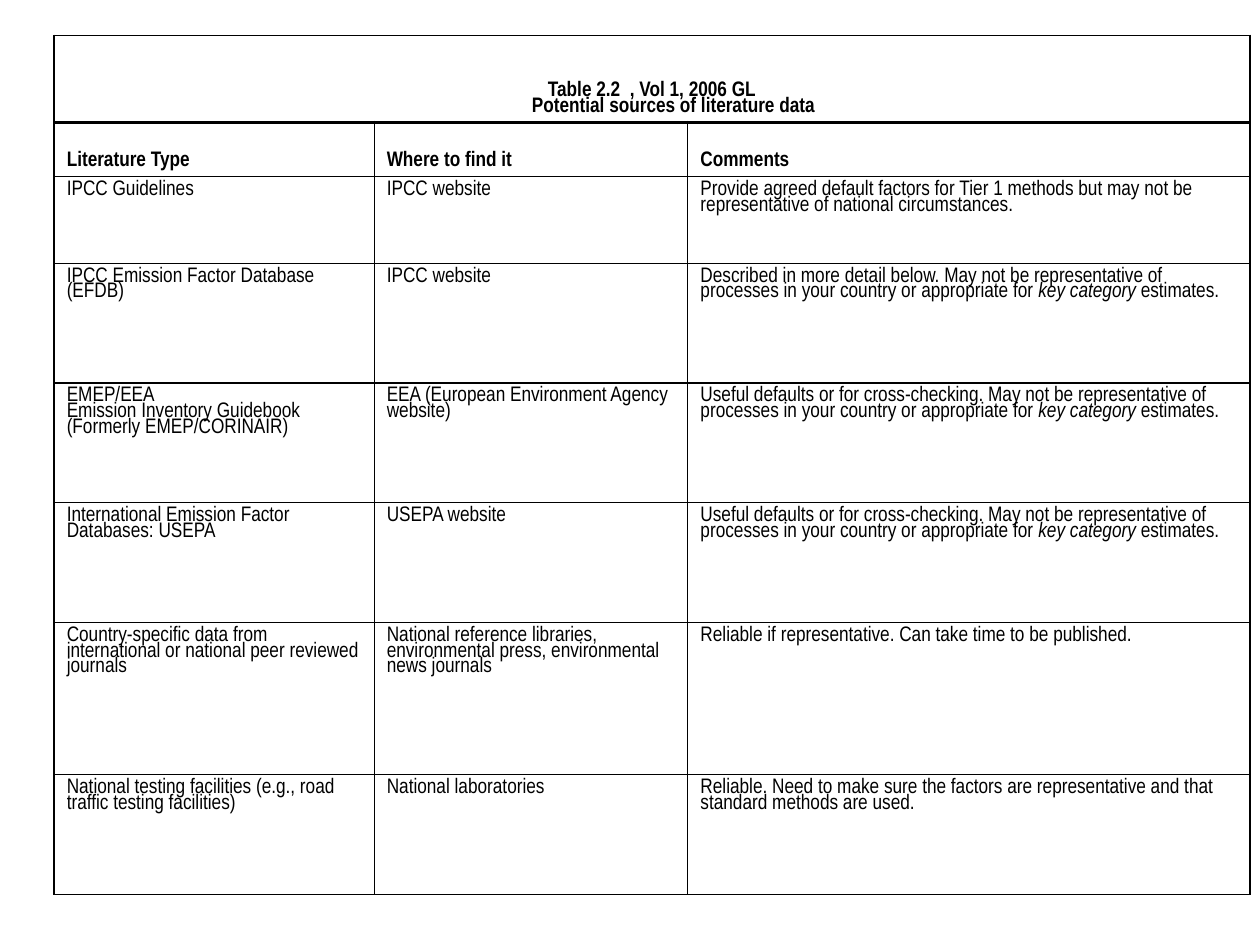
from lxml.etree import SubElement
from pptx import Presentation
from pptx.dml.color import RGBColor
from pptx.enum.text import MSO_ANCHOR as Anchor, PP_ALIGN as Align
from pptx.oxml.ns import qn
from pptx.util import Inches, Pt

BLACK, WHITE = "000000", "FFFFFF"
THIN, MEDIUM, THICK = 0.75, 1, 2
HANGING = Inches(0.38)
ITALIC_TERM = "key category"
CROSS_CHECK = (
    "Useful defaults or for cross-checking. May not be representative of processes "
    "in your country or appropriate for key category estimates."
)


def write_text(cell, text, bold=False, align=Align.LEFT, anchor=Anchor.TOP,
               hanging=False, size=12, font="Arial Narrow", color=BLACK):
    cell.vertical_anchor = anchor
    frame = cell.text_frame
    for index, line in enumerate(text.split("\n")):
        paragraph = frame.paragraphs[0] if index == 0 else frame.add_paragraph()
        paragraph.alignment = align
        paragraph.line_spacing = 0.8
        if hanging:
            properties = paragraph._p.get_or_add_pPr()
            properties.set("marL", str(HANGING))
            properties.set("indent", str(-HANGING))
        for number, part in enumerate(line.split("\v")):
            if number:
                paragraph.add_line_break()
            before, term, after = part.partition(ITALIC_TERM)
            for piece in filter(None, (before, term, after)):
                run = paragraph.add_run()
                run.text = piece
                run.font.name = font
                run.font.size = Pt(size)
                run.font.bold = bold
                run.font.italic = piece == ITALIC_TERM
                run.font.color.rgb = RGBColor.from_string(color)


def draw_borders(cell, widths, color=BLACK):
    properties = cell._tc.get_or_add_tcPr()
    for side, width in zip("LRTB", widths):
        line = SubElement(properties, qn(f"a:ln{side}"), w=str(Pt(width)))
        fill = SubElement(line, qn("a:solidFill"))
        SubElement(fill, qn("a:srgbClr"), val=color)


column_widths = [2.54, 2.49, 4.46]
row_heights = [0.69, 0.43, 0.69, 0.95, 0.95, 0.95, 1.21, 0.95]
rows = [
    ["Table 2.2  , Vol 1, 2006 GL\vPotential sources of literature data ", "", ""],
    ["Literature Type", "Where to find it", "Comments"],
    ["IPCC Guidelines", "IPCC website",
     "Provide agreed default factors for Tier 1 methods but may not be "
     "representative of national circumstances."],
    ["IPCC Emission Factor Database (EFDB)", "IPCC website",
     "Described in more detail below. May not be representative of processes "
     "in your country or appropriate for key category estimates."],
    ["EMEP/EEA\nEmission Inventory Guidebook (Formerly EMEP/CORINAIR)",
     "EEA (European Environment Agency website)", CROSS_CHECK],
    ["International Emission Factor Databases: USEPA", "USEPA website", CROSS_CHECK],
    ["Country-specific data from international or national peer reviewed journals",
     "National reference libraries, environmental press, environmental news journals",
     "Reliable if representative. Can take time to be published."],
    ["National testing facilities (e.g., road traffic testing facilities)",
     "National laboratories",
     "Reliable. Need to make sure the factors are representative and that "
     "standard methods are used."],
]
column_lines = [MEDIUM, THIN, THIN, MEDIUM]
row_lines = [MEDIUM, THICK, MEDIUM] + [THIN] * 5 + [MEDIUM]

presentation = Presentation()
presentation.slide_width, presentation.slide_height = Inches(10), Inches(7.5)
slide = presentation.slides.add_slide(presentation.slide_layouts[6])

shape = slide.shapes.add_table(
    len(rows), len(column_widths), Inches(0.43), Inches(0.28),
    Inches(sum(column_widths)), Inches(sum(row_heights)))
table = shape.table
table.first_row = table.horz_banding = False
for column, width in zip(table.columns, column_widths):
    column.width = Inches(width)
for row, height in zip(table.rows, row_heights):
    row.height = Inches(height)
table.cell(0, 0).merge(table.cell(0, 2))

for r, texts in enumerate(rows):
    is_title, is_heading = r == 0, r <= 1
    for c, text in enumerate(texts):
        cell = table.cell(r, c)
        left, right = (MEDIUM, MEDIUM) if is_title else column_lines[c:c + 2]
        draw_borders(cell, [left, right, row_lines[r], row_lines[r + 1]])
        cell.fill.solid()
        cell.fill.fore_color.rgb = RGBColor.from_string(WHITE)
        if text:
            write_text(cell, text, bold=is_heading,
                       align=Align.CENTER if is_title else Align.LEFT,
                       anchor=Anchor.BOTTOM if is_heading else Anchor.TOP,
                       hanging=is_heading or len(text) < 25)

presentation.save("out.pptx")
